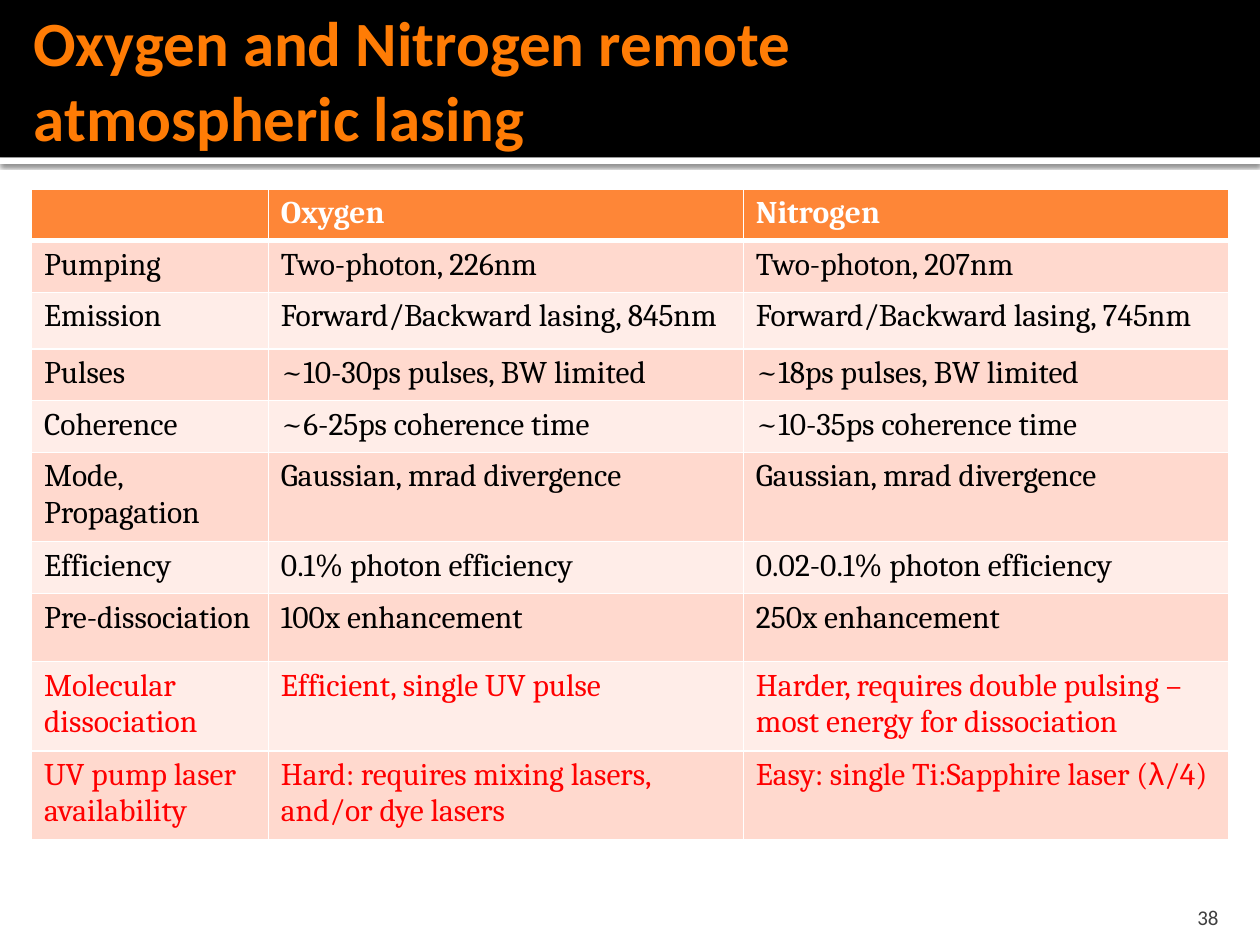
import pptx
import pptx.dml.color
import pptx.enum.shapes
import pptx.enum.text
import pptx.oxml
import pptx.oxml.ns
import pptx.util
from pptx.util import Inches

THEME = {
    "white": "FFFFFF", "black": "000000", "title": "FF7C05", "number": "3F3F3F",
    "header": "FE8637", "bands": ("FFD9CE", "FFEDE8"), "highlight": "FF0000",
    "title_size": 36, "table_size": 18, "number_size": 12,
    "heading_font": "Calibri", "table_font": "Cambria", "symbol_font": "Arial",
}
NAMESPACE = pptx.oxml.ns.nsdecls("a")


def rgb(name):
    return pptx.dml.color.RGBColor.from_string(name)


def write(text_frame, text, font, size, color, bold=False):
    """Write one paragraph, giving the Greek letter its own font."""
    paragraph = text_frame.paragraphs[0]
    for piece in filter(None, text.partition("λ")):
        run = paragraph.add_run()
        run.text = piece
        run.font.name = THEME["symbol_font"] if piece == "λ" else font
        run.font.size = pptx.util.Pt(size)
        run.font.bold = bold
        run.font.color.rgb = rgb(color)
    return paragraph


presentation = pptx.Presentation()
presentation.slide_width, presentation.slide_height = Inches(10), Inches(7.5)
slide = presentation.slides.add_slide(presentation.slide_layouts[6])

# Title band, with a shadowed white strip below it
for top, height, color in ((1.25, 0.05, "white"), (0, 1.25, "black")):
    band = slide.shapes.add_shape(
        pptx.enum.shapes.MSO_SHAPE.RECTANGLE, 0, Inches(top), Inches(10), Inches(height))
    band.shadow.inherit = False
    band.fill.solid()
    band.fill.fore_color.rgb = rgb(THEME[color])
    band.line.fill.background()
    if color == "white":
        effects = band._element.spPr.find(pptx.oxml.ns.qn("a:effectLst"))
        effects.append(pptx.oxml.parse_xml(
            f'<a:outerShdw {NAMESPACE} blurRad="31750" dist="10160" dir="5400000">'
            f'<a:srgbClr val="{THEME["black"]}"><a:alpha val="60000"/></a:srgbClr>'
            '</a:outerShdw>'))

# Title
title = slide.shapes.add_textbox(Inches(0.17), Inches(0.17), Inches(7.58), Inches(0.91))
title.text_frame.word_wrap = True
title.text_frame.vertical_anchor = pptx.enum.text.MSO_ANCHOR.MIDDLE
title.text_frame.margin_right = Inches(0.05)
write(title.text_frame, "Oxygen and Nitrogen remote atmospheric lasing",
      THEME["heading_font"], THEME["title_size"], THEME["title"], bold=True)

# Slide number
number = slide.shapes.add_textbox(Inches(8.97), Inches(7.08), Inches(0.8), Inches(0.3))
number.text_frame.word_wrap = True
number.text_frame.vertical_anchor = pptx.enum.text.MSO_ANCHOR.BOTTOM
number.text_frame.margin_bottom = 0
paragraph = write(number.text_frame, "38", THEME["heading_font"],
                  THEME["number_size"], THEME["number"])
paragraph.alignment = pptx.enum.text.PP_ALIGN.RIGHT

# Comparison table: row height, then the three cells
rows = [
    (0.41, "", "Oxygen", "Nitrogen"),
    (0.41, "Pumping", "Two-photon, 226nm", "Two-photon, 207nm"),
    (0.45, "Emission", "Forward/Backward lasing, 845nm", "Forward/Backward lasing, 745nm"),
    (0.41, "Pulses", "~10-30ps pulses, BW limited", "~18ps pulses, BW limited"),
    (0.41, "Coherence", "~6-25ps coherence time", "~10-35ps coherence time"),
    (0.71, "Mode, Propagation", "Gaussian, mrad divergence", "Gaussian, mrad divergence"),
    (0.41, "Efficiency", "0.1% photon efficiency", "0.02-0.1% photon efficiency"),
    (0.54, "Pre-dissociation", "100x enhancement", "250x enhancement"),
    (0.71, "Molecular dissociation", "Efficient, single UV pulse",
     "Harder, requires double pulsing – most energy for dissociation"),
    (0.71, "UV pump laser availability", "Hard: requires mixing lasers, and/or dye lasers",
     "Easy: single Ti:Sapphire laser (λ/4)"),
]
column_widths = (1.88, 3.77, 3.85)
first_highlighted = len(rows) - 2

table = slide.shapes.add_table(len(rows), len(column_widths), Inches(0.25), Inches(1.5),
                               Inches(9.5), Inches(5.16)).table
for column, width in zip(table.columns, column_widths):
    column.width = Inches(width)

for row_index, (height, *texts) in enumerate(rows):
    table.rows[row_index].height = Inches(height)
    is_header = row_index == 0
    if is_header:
        fill, color = THEME["header"], THEME["white"]
    else:
        fill = THEME["bands"][(row_index - 1) % 2]
        color = THEME["highlight"] if row_index >= first_highlighted else THEME["black"]
    # The rule between header and body is thicker than the others
    thick_side = {0: "B", 1: "T"}.get(row_index)

    for column_index, text in enumerate(texts):
        cell = table.cell(row_index, column_index)
        properties = cell._tc.get_or_add_tcPr()
        for side in "LRTB":
            width = pptx.util.Pt(3 if side == thick_side else 1)
            properties.append(pptx.oxml.parse_xml(
                f'<a:ln{side} {NAMESPACE} w="{width}"><a:solidFill>'
                f'<a:srgbClr val="{THEME["white"]}"/></a:solidFill></a:ln{side}>'))
        cell.fill.solid()
        cell.fill.fore_color.rgb = rgb(fill)
        write(cell.text_frame, text, THEME["table_font"], THEME["table_size"],
              color, bold=is_header)

presentation.save("out.pptx")
